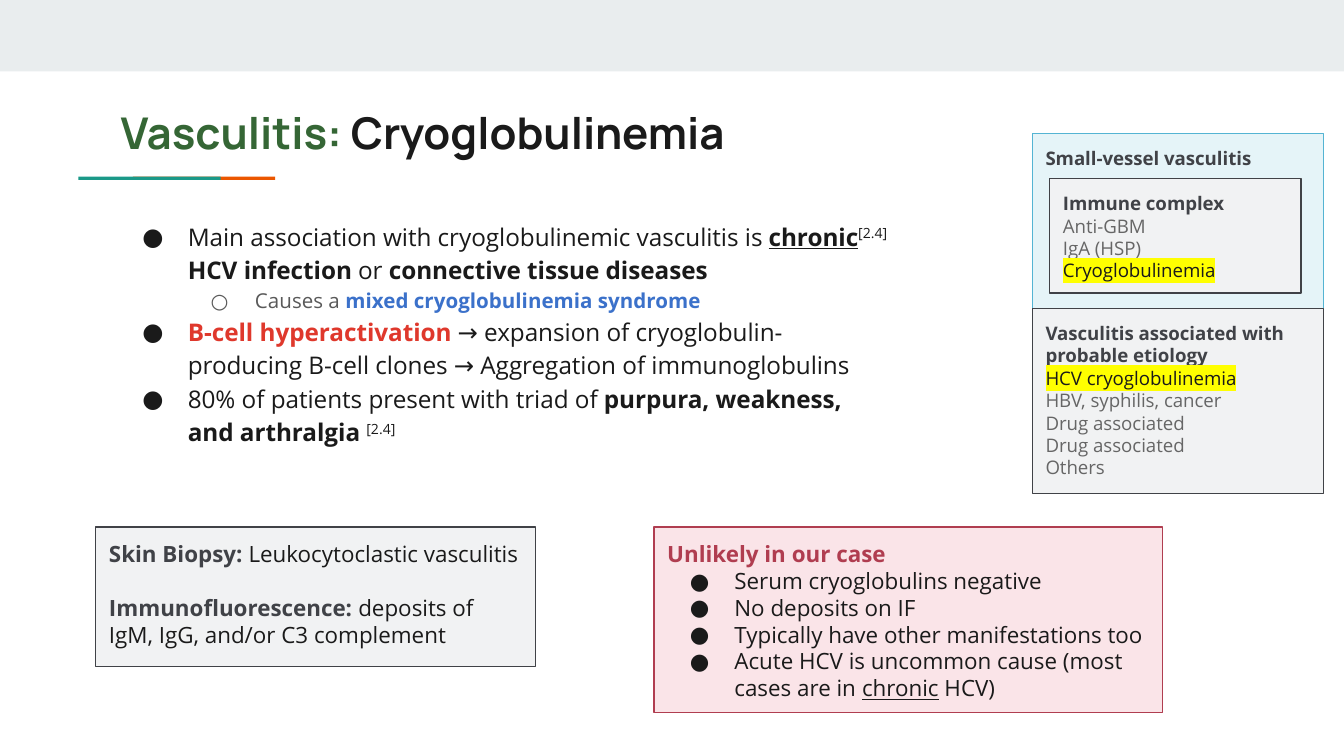
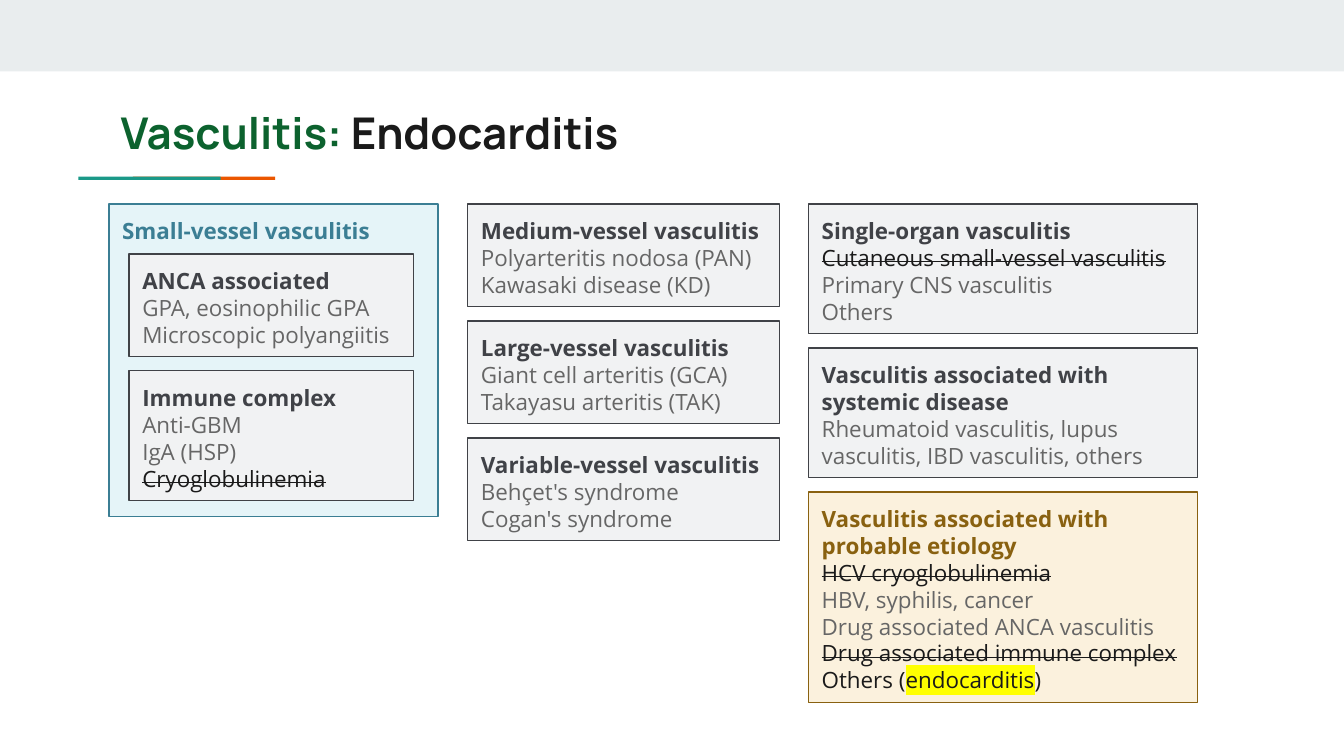
from dataclasses import dataclass

from lxml import etree
from pptx import Presentation
from pptx import util as u
from pptx.dml.color import RGBColor
from pptx.enum import shapes, text
from pptx.oxml import ns

INK = RGBColor(0x1A, 0x1A, 0x1A)
MUTED = RGBColor(0x66, 0x66, 0x66)
SUBTLE = RGBColor(0x59, 0x59, 0x59)
SLATE = RGBColor(0x40, 0x42, 0x47)
BAND = RGBColor(0xE9, 0xED, 0xEE)
TEAL = RGBColor(0x1A, 0x99, 0x88)
ORANGE = RGBColor(0xEB, 0x56, 0x00)
FOREST = RGBColor(0x35, 0x66, 0x35)
PINE = RGBColor(0x0C, 0x62, 0x2E)
BLUE = RGBColor(0x3B, 0x71, 0xCA)
RED = RGBColor(0xDF, 0x38, 0x2C)
PALE = RGBColor(0xF1, 0xF2, 0xF3)
ICE = RGBColor(0xE5, 0xF4, 0xF8)
SKY = RGBColor(0x54, 0xB4, 0xD3)
OCEAN = RGBColor(0x3B, 0x7E, 0x94)
ROSE = RGBColor(0xFA, 0xE4, 0xE8)
CRIMSON = RGBColor(0xB0, 0x3D, 0x50)
CREAM = RGBColor(0xFB, 0xF1, 0xDD)
BRONZE = RGBColor(0x89, 0x61, 0x10)
YELLOW = RGBColor(0xFF, 0xFF, 0x00)

TITLE_FONT, BODY_FONT = "Manrope", "Open Sans"
WIDTH, HEIGHT, INSET = 25.4, 14.29, 0.25
ROW, PADDING, GAP = 0.51, 0.41, 0.27
GREY_STYLE = (PALE, SLATE)


@dataclass
class Span:
    """A stretch of text in one style."""
    words: str
    color: RGBColor = INK
    bold: bool = False
    underline: bool = False
    strike: bool = False
    raised: bool = False
    marked: bool = False


@dataclass
class Para:
    """A paragraph with its bullet and spacing."""
    spans: list
    bullet: str = ""
    bullet_color: RGBColor = INK
    margin: float = 1.27
    hang: float = 0.84
    size: float = 0
    before: float = 0
    spacing: float = 0


@dataclass
class Card:
    """A heading with its entries, and the text rows they take."""
    heading: str
    entries: list
    rows: int
    style: tuple = GREY_STYLE

    def paras(self):
        """Return the heading and the entries as paragraphs."""
        return [Para([Span(self.heading, self.style[1], bold=True)])] + self.entries


def muted(*lines):
    """Return one grey paragraph for each line."""
    return [Para([Span(line, MUTED)]) for line in lines]


def struck(line):
    """Return a crossed-out paragraph."""
    return Para([Span(line, strike=True)])


def marked(line):
    """Return a highlighted paragraph."""
    return Para([Span(line, marked=True)])


def add_element(parent, tag, **attributes):
    """Append a drawing element to its parent."""
    return etree.SubElement(parent, ns.qn(tag), attributes)


def set_bullet(para, item):
    """Give a paragraph its hanging bullet."""
    properties = para._p.get_or_add_pPr()
    properties.set("marL", str(u.Cm(item.margin)))
    properties.set("indent", str(-u.Cm(item.hang)))
    color = add_element(properties, "a:buClr")
    add_element(color, "a:srgbClr", val=str(item.bullet_color))
    add_element(properties, "a:buFont", typeface=BODY_FONT)
    add_element(properties, "a:buChar", char=item.bullet)


def add_span(para, span, size, font):
    """Add one styled run to a paragraph."""
    run = para.add_run()
    run.text = span.words
    run.font.size = u.Pt(size)
    run.font.bold = span.bold
    run.font.underline = span.underline
    run.font.color.rgb = span.color
    properties = run._r.get_or_add_rPr()
    if span.strike:
        properties.set("strike", "sngStrike")
    if span.raised:
        properties.set("baseline", "30000")
    if span.marked:
        highlight = add_element(properties, "a:highlight")
        add_element(highlight, "a:srgbClr", val=str(YELLOW))
    run.font.name = font


def write(box, items, size, font=BODY_FONT):
    """Fill a box with paragraphs from its top left corner."""
    frame = box.text_frame
    frame.word_wrap = True
    frame.auto_size = text.MSO_AUTO_SIZE.NONE
    frame.vertical_anchor = text.MSO_ANCHOR.TOP
    frame.margin_left = frame.margin_right = u.Cm(INSET)
    frame.margin_top = frame.margin_bottom = u.Cm(INSET)
    for index, item in enumerate(items):
        para = frame.add_paragraph() if index else frame.paragraphs[0]
        para.alignment = text.PP_ALIGN.LEFT
        if item.bullet:
            set_bullet(para, item)
        if item.spacing:
            para.line_spacing = item.spacing
        if item.before:
            para.space_before = u.Pt(item.before)
        for span in item.spans:
            add_span(para, span, item.size or size, font)


def add_box(page, area, fill, line=None):
    """Draw a flat rectangle."""
    box = page.shapes.add_shape(shapes.MSO_SHAPE.RECTANGLE, *map(u.Cm, area))
    box.shadow.inherit = False
    box.fill.solid()
    box.fill.fore_color.rgb = fill
    if line is None:
        box.line.fill.background()
    else:
        box.line.color.rgb = line
        box.line.width = u.Pt(0.75)
    return box


def add_text(page, area, items, size, font=BODY_FONT):
    """Place a plain text box."""
    write(page.shapes.add_textbox(*map(u.Cm, area)), items, size, font)


def add_panel(page, area, items, size=12, style=GREY_STYLE):
    """Place a bordered box of text."""
    write(add_box(page, area, *style), items, size)


def add_stack(page, left, top, width, cards):
    """Stack cards downward, each as tall as its rows."""
    for card in cards:
        height = PADDING + ROW * card.rows
        add_panel(page, (left, top, width, height), card.paras(), style=card.style)
        top += height + GAP


def add_page(deck, topic, lead_color):
    """Start a slide with its band, accent rule and title."""
    page = deck.slides.add_slide(deck.slide_layouts[6])
    add_box(page, (0, 0, WIDTH, 1.35), BAND)
    for left, color in ((2.51, ORANGE), (1.48, TEAL)):
        add_box(page, (left, 3.34, 2.69, 0.06), color)
    title = [Span("Vasculitis:", lead_color, bold=True), Span(" " + topic, bold=True)]
    add_text(page, (2.03, 1.75, 21.36, 1.5), [Para(title)], 23.4, TITLE_FONT)
    return page


def add_findings(page, area):
    """List the main points about cryoglobulinemia."""
    citation = "[2.4]"
    point = dict(bullet="●", hang=0.86, spacing=1.15)
    add_text(page, area, [
        Para([Span("Main association with cryoglobulinemic vasculitis is "),
              Span("chronic", bold=True, underline=True),
              Span(citation + " ", raised=True),
              Span("HCV infection", bold=True), Span(" or "),
              Span("connective tissue diseases", bold=True)], **point),
        Para([Span("Causes a ", SUBTLE),
              Span("mixed cryoglobulinemia syndrome", BLUE, bold=True)],
             bullet="○", bullet_color=SUBTLE, margin=2.54, size=11, spacing=1.15),
        Para([Span("B-cell hyperactivation", RED, bold=True),
              Span(" → expansion of cryoglobulin-producing B-cell clones"
                   " → Aggregation of immunoglobulins")], **point),
        Para([Span("80% of patients present with triad of "),
              Span("purpura, weakness, and arthralgia ", bold=True),
              Span(citation, raised=True)], **point),
    ], 13)


def add_classification(page, left, top, width):
    """Show where cryoglobulinemia sits in the classification."""
    outer_height = 3.31
    heading = Para([Span("Small-vessel vasculitis", SLATE, bold=True)])
    add_panel(page, (left, top, width, outer_height), [heading], 10, (ICE, SKY))
    immune = Card("Immune complex", muted("Anti-GBM", "IgA (HSP)")
                  + [marked("Cryoglobulinemia")], 4)
    add_panel(page, (left + 0.33, top + 0.86, 4.75, 2.16), immune.paras(), 10)
    etiology = Card("Vasculitis associated with probable etiology",
                    [marked("HCV cryoglobulinemia")]
                    + muted("HBV, syphilis, cancer", "Drug associated",
                            "Drug associated", "Others"), 7)
    add_panel(page, (left, top + outer_height, width, 3.5), etiology.paras(), 10)


def add_verdict(page, area):
    """Say why the diagnosis is unlikely."""
    reasons = [[Span("Serum cryoglobulins negative")],
               [Span("No deposits on IF")],
               [Span("Typically have other manifestations too")],
               [Span("Acute HCV is uncommon cause (most cases are in "),
                Span("chronic", underline=True), Span(" HCV)")]]
    heading = Para([Span("Unlikely in our case", CRIMSON, bold=True)])
    add_panel(page, area, [heading] + [Para(spans, bullet="●") for spans in reasons],
              style=(ROSE, CRIMSON))


def add_pathology(page, area):
    """Give the biopsy and immunofluorescence findings."""
    add_panel(page, area, [
        Para([Span("Skin Biopsy:", SLATE, bold=True),
              Span(" Leukocytoclastic vasculitis")]),
        Para([Span("Immunofluorescence: ", SLATE, bold=True),
              Span("deposits of IgM, IgG, and/or C3 complement")], before=14.4),
    ])


def add_small_vessel(page, left, top, width, height):
    """Frame the two groups of small-vessel vasculitis."""
    heading = Para([Span("Small-vessel vasculitis", OCEAN, bold=True)])
    add_panel(page, (left, top, width, height), [heading], style=(ICE, OCEAN))
    add_stack(page, left + 0.38, top + 0.94, 5.38, [
        Card("ANCA associated",
             muted("GPA, eosinophilic GPA", "Microscopic polyangiitis"), 3),
        Card("Immune complex",
             muted("Anti-GBM", "IgA (HSP)") + [struck("Cryoglobulinemia")], 4),
    ])


def add_vessel_sizes(page, left, top, width):
    """Stack the groups named after vessel size."""
    add_stack(page, left, top, width, [
        Card("Medium-vessel vasculitis",
             muted("Polyarteritis nodosa (PAN)", "Kawasaki disease (KD)"), 3),
        Card("Large-vessel vasculitis",
             muted("Giant cell arteritis (GCA)", "Takayasu arteritis (TAK)"), 3),
        Card("Variable-vessel vasculitis",
             muted("Behçet's syndrome", "Cogan's syndrome"), 3),
    ])


def add_other_groups(page, left, top, width):
    """Stack the groups named after organ, disease or etiology."""
    others = Para([Span("Others ("), Span("endocarditis", marked=True), Span(")")])
    add_stack(page, left, top, width, [
        Card("Single-organ vasculitis",
             [struck("Cutaneous small-vessel vasculitis")]
             + muted("Primary CNS vasculitis", "Others"), 4),
        Card("Vasculitis associated with systemic disease",
             muted("Rheumatoid vasculitis, lupus vasculitis, IBD vasculitis, others"), 4),
        Card("Vasculitis associated with probable etiology",
             [struck("HCV cryoglobulinemia")]
             + muted("HBV, syphilis, cancer", "Drug associated ANCA vasculitis")
             + [struck("Drug associated immune complex"), others], 7, (CREAM, BRONZE)),
    ])


def add_cryoglobulinemia(deck):
    """Build the cryoglobulinemia slide."""
    page = add_page(deck, "Cryoglobulinemia", FOREST)
    add_findings(page, (2.03, 3.86, 15.06, 6.27))
    add_classification(page, 19.51, 2.52, 5.51)
    add_verdict(page, (12.36, 9.96, 9.61, 3.51))
    add_pathology(page, (1.81, 9.96, 8.31, 2.64))


def add_endocarditis(deck):
    """Build the endocarditis slide."""
    page = add_page(deck, "Endocarditis", PINE)
    top = 3.86
    add_small_vessel(page, 2.06, top, 6.22, 5.91)
    add_vessel_sizes(page, 8.84, top, 5.89)
    add_other_groups(page, 15.28, top, 7.35)


def main():
    """Build and save the deck."""
    deck = Presentation()
    deck.slide_width, deck.slide_height = u.Cm(WIDTH), u.Cm(HEIGHT)
    add_cryoglobulinemia(deck)
    add_endocarditis(deck)
    deck.save("out.pptx")


if __name__ == "__main__":
    main()
